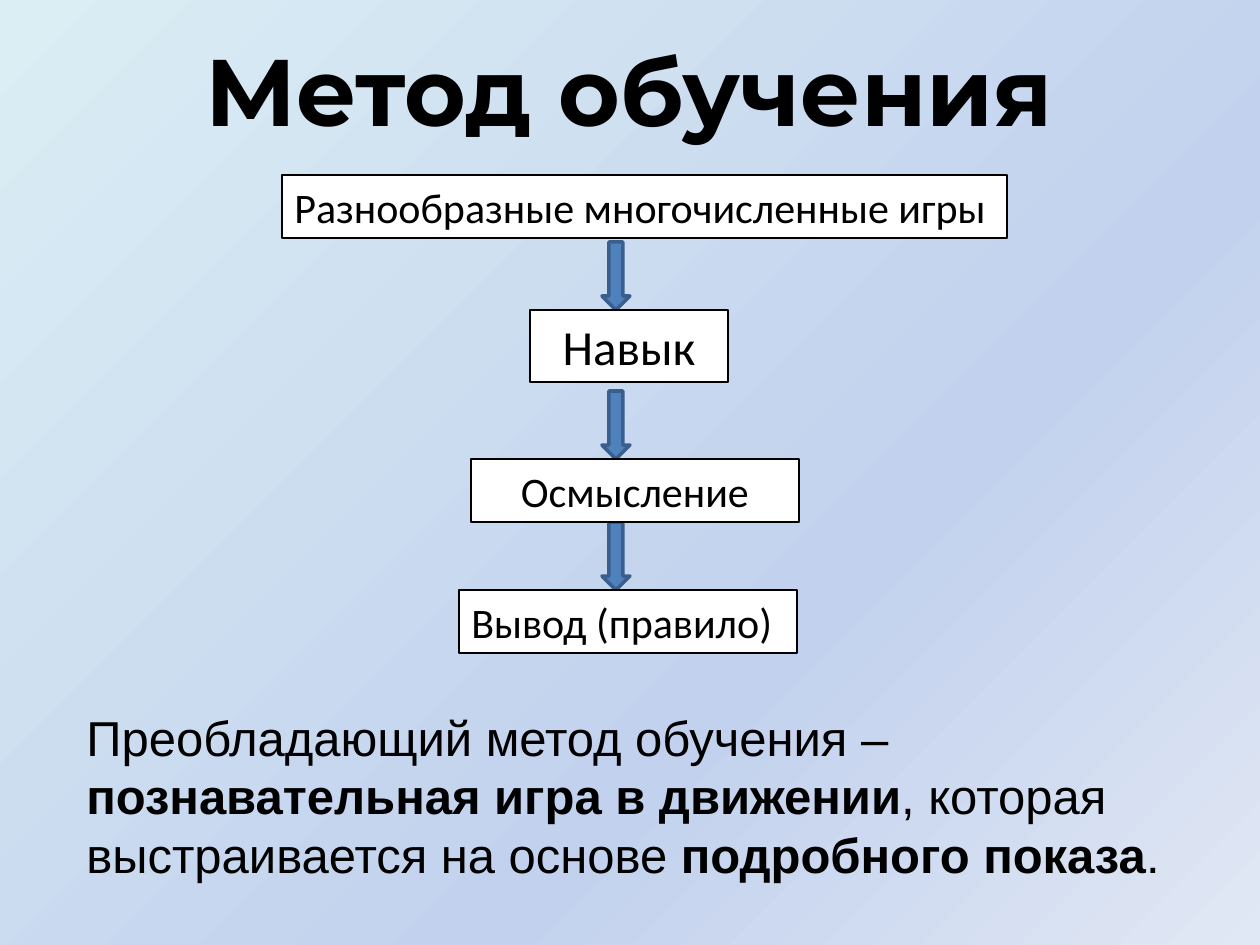
import lxml.etree
import pptx
import pptx.dml.color
import pptx.enum.shapes
import pptx.enum.text
import pptx.oxml.ns
import pptx.util

COLORS = {
    "ink": "000000",
    "box": "FFFFFF",
    "arrow": "4F81BD",
    "arrow_edge": "3A5F8C",
}
BACKGROUND_STOPS = [(0, "DBEEF4"), (65, "C2D1ED"), (100, "E1E8F5")]

TITLE = "Метод обучения"
TITLE_PLACE = (183, 26, 893, 127)

STEPS = [
    ("Разнообразные многочисленные игры", (282, 175, 725, 63), 24, "LEFT"),
    ("Навык", (530, 310, 198, 72), 28, "CENTER"),
    ("Осмысление", (471, 459, 328, 63), 24, "CENTER"),
    ("Вывод (правило)", (459, 590, 338, 63), 24, "LEFT"),
]
ARROW_LEFT, ARROW_WIDTH, ARROW_HEIGHT = 602, 28, 68

SUMMARY = [
    ("Преобладающий метод обучения – ", False),
    ("познавательная игра в движении", True),
    (", которая выстраивается на основе ", False),
    ("подробного показа", True),
    (".", False),
]
SUMMARY_PLACE = (74, 701, 1101, 190)


def px(count):
    return round(count * 914400 / 126)


def color(name):
    return pptx.dml.color.RGBColor.from_string(COLORS[name])


def paint(shape, fill, edge, width):
    shape.fill.solid()
    shape.fill.fore_color.rgb = color(fill)
    shape.line.color.rgb = color(edge)
    shape.line.width = pptx.util.Pt(width)


def add_text(slide, place, pieces, size, font, align="LEFT", wrap=True):
    box = slide.shapes.add_textbox(*map(px, place))
    frame = box.text_frame
    frame.word_wrap = wrap
    frame.auto_size = pptx.enum.text.MSO_AUTO_SIZE.SHAPE_TO_FIT_TEXT
    paragraph = frame.paragraphs[0]
    paragraph.alignment = getattr(pptx.enum.text.PP_ALIGN, align)
    for words, bold in pieces:
        run = paragraph.add_run()
        run.text = words
        run.font.size = pptx.util.Pt(size)
        run.font.name = font
        run.font.bold = bold
        run.font.color.rgb = color("ink")
    return box


def add_arrow(slide, bottom):
    place = (ARROW_LEFT, bottom - ARROW_HEIGHT, ARROW_WIDTH, ARROW_HEIGHT)
    arrow = slide.shapes.add_shape(
        pptx.enum.shapes.MSO_SHAPE.DOWN_ARROW, *map(px, place))
    arrow.shadow.inherit = False
    paint(arrow, "arrow", "arrow_edge", 2)


def set_background(slide):
    fill = slide.background.fill
    fill.gradient()
    qn = pptx.oxml.ns.qn
    stops = next(slide.background._cSld.iter(qn("a:gsLst")))
    for stop in list(stops):
        stops.remove(stop)
    for percent, shade in BACKGROUND_STOPS:
        stop = lxml.etree.SubElement(stops, qn("a:gs"), pos=str(percent * 1000))
        lxml.etree.SubElement(stop, qn("a:srgbClr"), val=shade)
    fill.gradient_angle = 315


def main():
    deck = pptx.Presentation()
    deck.slide_width, deck.slide_height = px(1260), px(945)
    slide = deck.slides.add_slide(deck.slide_layouts[6])
    set_background(slide)

    add_text(slide, TITLE_PLACE, [(TITLE, True)], 54, "Montserrat", "CENTER", False)
    for _, place, _, _ in STEPS[1:]:
        add_arrow(slide, place[1])
    for words, place, size, align in STEPS:
        step = add_text(slide, place, [(words, False)], size, "Calibri", align)
        paint(step, "box", "ink", 0.75)
    add_text(slide, SUMMARY_PLACE, SUMMARY, 28, "Arial")

    deck.save("out.pptx")


if __name__ == "__main__":
    main()
